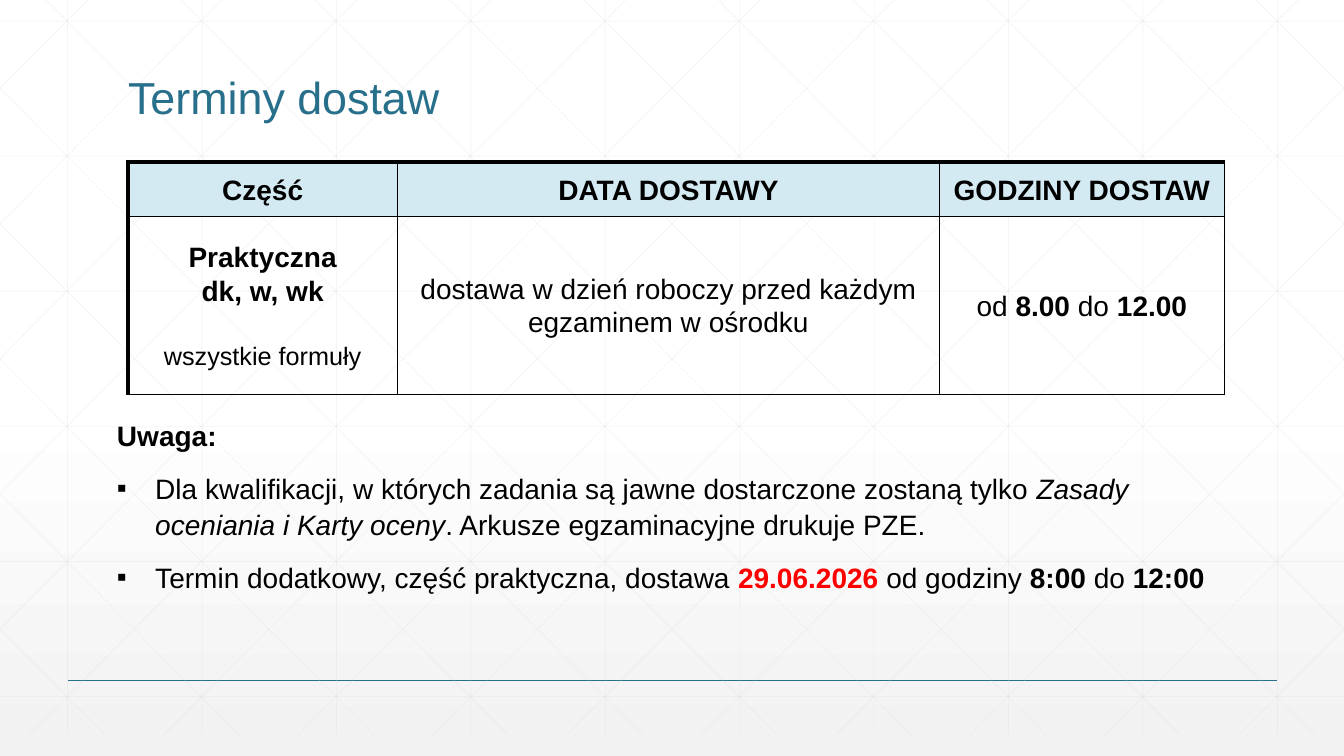
from dataclasses import dataclass

from lxml import etree
from pptx import Presentation
from pptx.dml.color import RGBColor
from pptx.enum import shapes, text
from pptx.oxml import ns
from pptx.util import Inches, Pt


@dataclass(frozen=True)
class Theme:
    font: str = "Arial"
    accent: str = "276F8B"
    ink: str = "000000"
    alert: str = "FF0000"
    header: str = "D4EAF3"
    grid: str = "D9D9D9"
    paper: str = "FFFFFF"
    shade: str = "F2F2F2"
    title: int = 32
    body: int = 20
    small: int = 18


THEME = Theme()
WIDTH, HEIGHT = 13.33, 7.5

prs = Presentation()
prs.slide_width, prs.slide_height = Inches(WIDTH), Inches(HEIGHT)
slide = prs.slides.add_slide(prs.slide_layouts[1])


def write(frame, runs, first=False, size=THEME.body, color=THEME.ink, bold=False,
          align=text.PP_ALIGN.LEFT, spacing=1.07, before=0, after=0, bullet=None):
    """Add one paragraph; runs are (text, overrides) pairs, a newline is a line break."""
    paragraph = frame.paragraphs[0] if first else frame.add_paragraph()
    properties = paragraph._p.get_or_add_pPr()
    indent = Inches(0.38) if bullet else 0
    properties.set("marL", str(indent))
    properties.set("indent", str(-indent))
    if bullet:
        etree.SubElement(properties, ns.qn("a:buFont"), typeface=THEME.font)
        etree.SubElement(properties, ns.qn("a:buChar"), char=bullet)
    else:
        etree.SubElement(properties, ns.qn("a:buNone"))
    paragraph.alignment, paragraph.line_spacing = align, spacing
    paragraph.space_before, paragraph.space_after = Pt(before), Pt(after)
    for words, style in runs:
        for number, line in enumerate(words.split("\n")):
            if number:
                paragraph.add_line_break()
            run = paragraph.add_run()
            run.text = line
            run.font.name, run.font.size = THEME.font, Pt(size)
            run.font.bold = style.get("bold", bold)
            run.font.italic = style.get("italic", False)
            run.font.color.rgb = RGBColor.from_string(style.get("color", color))


def draw_line(start, end, color, width, opacity=100):
    """Draw a straight line behind the placeholders."""
    line = slide.shapes.add_connector(
        shapes.MSO_CONNECTOR.STRAIGHT, *(Inches(v) for v in (*start, *end)))
    line.line.color.rgb = RGBColor.from_string(color)
    line.line.width = Pt(width)
    etree.SubElement(line._element.spPr, ns.qn("a:effectLst"))
    if opacity < 100:
        shade = next(line._element.iter(ns.qn("a:srgbClr")))
        etree.SubElement(shade, ns.qn("a:alpha"), val=str(opacity * 1000))
    slide.shapes._spTree.insert(2, line._element)


# Background
backdrop = slide.background.fill
backdrop.gradient()
backdrop.gradient_angle = 270
for stop, position, color in zip(backdrop.gradient_stops, (0.53, 1), (THEME.paper, THEME.shade)):
    stop.position = position
    stop.color.rgb = RGBColor.from_string(color)

# Grid of squares with both diagonals, clipped to the slide
STEP, GRID_BOTTOM, SLOPE = 4 / 3, 7.29, 0.994
grid_lines = [((x, 0), (x, GRID_BOTTOM)) for x in (0.67 + STEP * i for i in range(10))]
grid_lines += [((0, y), (WIDTH, y)) for y in (0.21 + 1.34 * i for i in range(6))]
for i in range(-5, 10):
    origin = 0.46 + STEP * i
    top = max(0, -origin / SLOPE)
    bottom = min(GRID_BOTTOM, (WIDTH - origin) / SLOPE)
    left, right = origin + SLOPE * top, origin + SLOPE * bottom
    grid_lines += [((left, top), (right, bottom)),
                   ((WIDTH - left, top), (WIDTH - right, bottom))]
for start, end in grid_lines:
    draw_line(start, end, THEME.grid, 0.5, opacity=25)
draw_line((0.67, 6.75), (12.67, 6.75), THEME.accent, 1)

# Title
heading = slide.shapes.title
heading.left, heading.top, heading.width, heading.height = map(Inches, (1.17, 0.39, 11, 0.89))
heading.text_frame.vertical_anchor = text.MSO_ANCHOR.BOTTOM
heading.text_frame.auto_size = text.MSO_AUTO_SIZE.NONE
write(heading.text_frame, [("Terminy dostaw", {})], first=True,
      size=THEME.title, color=THEME.accent, spacing=0.9)

# Delivery table: each cell is a list of (runs, format) paragraphs
BOLD = {"bold": True}
delivery_rows = [
    [[([(name, BOLD)], {})] for name in ("Część", "DATA DOSTAWY", "GODZINY DOSTAW")],
    [
        [([("Praktyczna\ndk, w, wk", BOLD)], {}),
         ([("wszystkie formuły", {})], {"size": THEME.small, "before": 24})],
        [([("dostawa w dzień roboczy przed każdym egzaminem w ośrodku", {})], {})],
        [([("od ", {}), ("8.00", BOLD), (" do ", {}), ("12.00", BOLD)], {})],
    ],
]
schedule = slide.shapes.add_table(2, 3, *map(Inches, (1.27, 1.61, 10.87, 2.3))).table
schedule.first_row = schedule.horz_banding = False
for column, width in zip(schedule.columns, (2.67, 5.38, 2.82)):
    column.width = Inches(width)
for row, height in zip(schedule.rows, (0.54, 1.76)):
    row.height = Inches(height)

for r, delivery_row in enumerate(delivery_rows):
    for c, paragraphs in enumerate(delivery_row):
        cell = schedule.cell(r, c)
        cell.margin_left = cell.margin_right = Inches(0.05)
        cell.margin_top = cell.margin_bottom = 0
        cell.vertical_anchor = text.MSO_ANCHOR.MIDDLE
        thick = {"lnL": c == 0, "lnR": False, "lnT": r == 0, "lnB": False}
        for edge, is_thick in thick.items():
            border = etree.SubElement(cell._tc.get_or_add_tcPr(), ns.qn(f"a:{edge}"),
                                      w=str(Pt(3 if is_thick else 0.75)))
            ink = etree.SubElement(border, ns.qn("a:solidFill"))
            etree.SubElement(ink, ns.qn("a:srgbClr"), val=THEME.ink)
        if r == 0:
            cell.fill.solid()
            cell.fill.fore_color.rgb = RGBColor.from_string(THEME.header)
        else:
            cell.fill.background()
        for number, (runs, style) in enumerate(paragraphs):
            write(cell.text_frame, runs, first=number == 0,
                  align=text.PP_ALIGN.CENTER, **style)

# Notes under the table
remarks = slide.placeholders[1]
remarks.left, remarks.top, remarks.width, remarks.height = map(Inches, (1.06, 4.08, 11.5, 1.85))
remarks.text_frame.vertical_anchor = text.MSO_ANCHOR.TOP
remarks.text_frame.auto_size = text.MSO_AUTO_SIZE.SHAPE_TO_FIT_TEXT
write(remarks.text_frame, [("Uwaga:", BOLD)], first=True, after=6)
for runs in (
    [("Dla kwalifikacji, w których zadania są jawne dostarczone zostaną tylko ", {}),
     ("Zasady oceniania i Karty oceny", {"italic": True}),
     (". Arkusze egzaminacyjne drukuje PZE.", {})],
    [("Termin dodatkowy, część praktyczna, dostawa ", {}),
     ("29.06.2026 ", {"bold": True, "color": THEME.alert}),
     ("od godziny ", {}), ("8:00", BOLD), (" do ", {}), ("12:00", BOLD)],
):
    write(remarks.text_frame, runs, before=6, after=6, bullet="▪")

prs.save("out.pptx")
